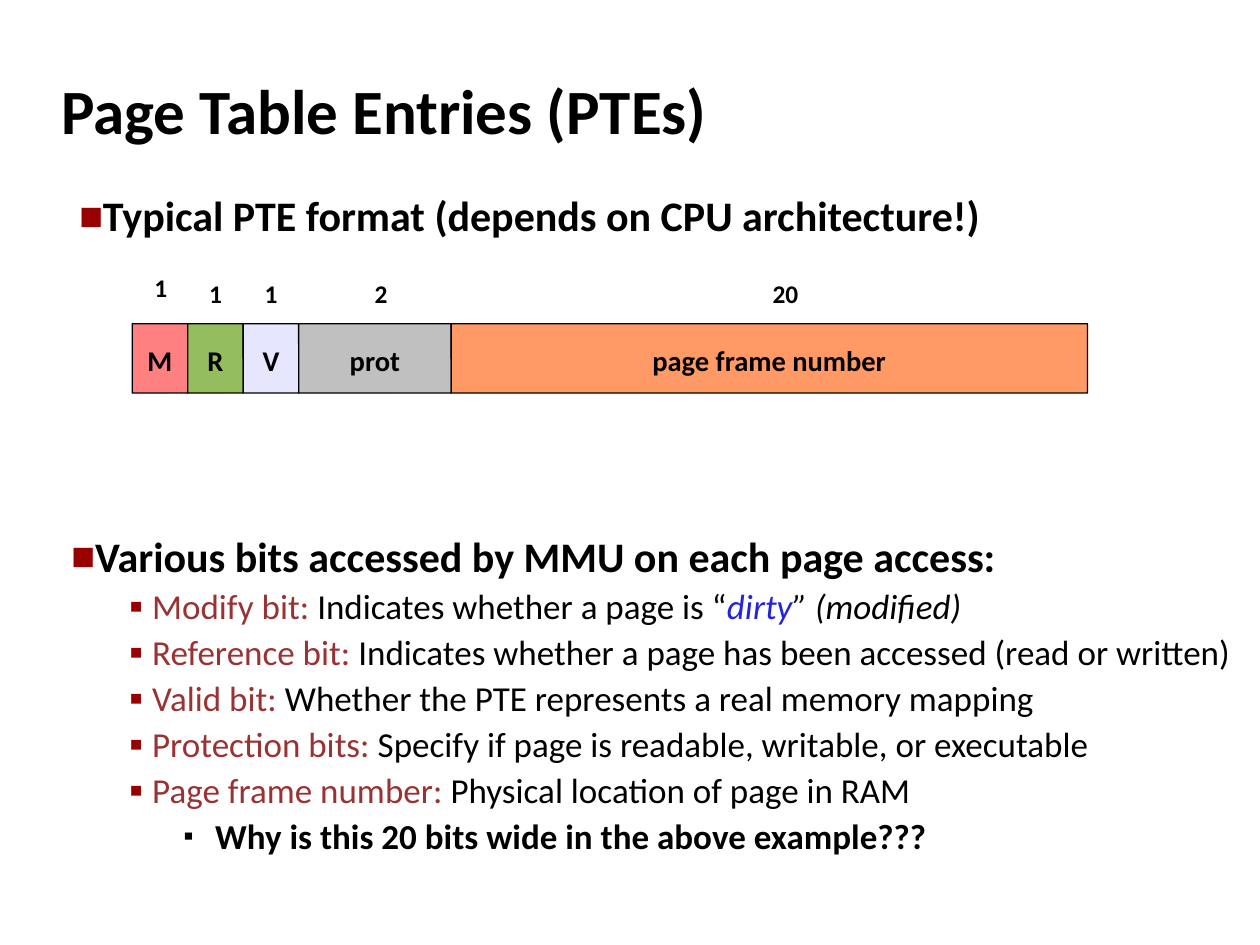
from dataclasses import dataclass

from lxml import etree
from pptx import Presentation
from pptx import util as u
from pptx.dml.color import RGBColor
from pptx.enum import shapes, text
from pptx.oxml.ns import qn


@dataclass(frozen=True)
class Theme:
    font: str = "Calibri"
    ink: str = "000000"
    term: str = "993333"
    accent: str = "2323DC"
    bullet: str = "990000"
    modify: str = "FF8080"
    reference: str = "94BD5E"
    valid: str = "E6E6FF"
    protection: str = "C0C0C0"
    frame: str = "FF9966"
    title: float = 36
    heading: float = 24
    detail: float = 20
    field: float = 16.3
    width: float = 14.5


THEME = Theme()


@dataclass(frozen=True)
class Level:
    margin: float
    indent: float
    size: float
    mark: str = ""
    scale: int = 100
    color: str = THEME.bullet
    bold: bool = False


TITLE = Level(9.4, -9.4, THEME.title, bold=True)
HEADING = Level(20.2, -13, THEME.heading, "■", 60, bold=True)
DETAIL = Level(53.3, -13, THEME.detail, "▪", 110)
QUESTION = Level(89.3, -18, THEME.detail, "▪", 80, THEME.ink, True)


@dataclass
class Deck:
    theme: Theme
    slide: object

    def style(self, run, size, color, bold, italic=False):
        font = run.font
        font.name, font.size = self.theme.font, u.Pt(size)
        font.bold, font.italic = bold, italic
        font.color.rgb = RGBColor.from_string(color)

    def bullet(self, paragraph, level):
        props = paragraph._p.get_or_add_pPr()
        props.set("marL", str(u.Pt(level.margin)))
        props.set("indent", str(u.Pt(level.indent)))
        if not level.mark:
            return
        color = etree.SubElement(props, qn("a:buClr"))
        etree.SubElement(color, qn("a:srgbClr"), val=level.color)
        etree.SubElement(props, qn("a:buSzPct"), val=str(level.scale * 1000))
        etree.SubElement(props, qn("a:buFont"), typeface=self.theme.font)
        etree.SubElement(props, qn("a:buChar"), char=level.mark)

    def outline(self, left, top, width, height, lines, anchor=text.MSO_ANCHOR.TOP):
        box = self.slide.shapes.add_textbox(*map(u.Pt, (left, top, width, height)))
        frame = box.text_frame
        frame.word_wrap = True
        frame.vertical_anchor = anchor
        for i, (level, parts) in enumerate(lines):
            paragraph = frame.add_paragraph() if i else frame.paragraphs[0]
            self.bullet(paragraph, level)
            paragraph.line_spacing = 0.94
            if i:
                paragraph.space_before = u.Pt(3.7)
            for words, color, italic in parts:
                run = paragraph.add_run()
                run.text = words
                self.style(run, level.size, color, level.bold, italic)

    def cell(self, left, top, width, height, words, size, fill=None, spacing=1.12):
        block = self.slide.shapes.add_shape(
            shapes.MSO_SHAPE.ROUNDED_RECTANGLE, *map(u.Pt, (left, top, width, height)))
        block.adjustments[0] = 0.003
        block.shadow.inherit = False
        frame = block.text_frame
        if fill:
            block.fill.solid()
            block.fill.fore_color.rgb = RGBColor.from_string(fill)
            block.line.color.rgb = RGBColor.from_string(self.theme.ink)
            block.line.width = u.Pt(0.75)
            frame.vertical_anchor = text.MSO_ANCHOR.MIDDLE
        else:
            block.fill.background()
            block.line.fill.background()
            frame.vertical_anchor = text.MSO_ANCHOR.TOP
        frame.margin_left = frame.margin_right = u.Pt(6.5)
        frame.margin_top = frame.margin_bottom = u.Pt(3.6)
        paragraph = frame.paragraphs[0]
        paragraph.text = words
        paragraph.alignment = text.PP_ALIGN.CENTER
        paragraph.line_spacing = spacing
        self.style(paragraph.runs[0], size, self.theme.ink, True)


def main():
    prs = Presentation()
    prs.slide_width, prs.slide_height = u.Pt(720), u.Pt(540)
    deck = Deck(THEME, prs.slides.add_slide(prs.slide_layouts[6]))

    def plain(words):
        return [(words, THEME.ink, False)]

    def definition(term, meaning):
        return DETAIL, [(term, THEME.term, False), (meaning, THEME.ink, False)]

    deck.outline(28, 34.6, 597.6, 59.8,
                 [(TITLE, plain("Page Table Entries (PTEs)"))], text.MSO_ANCHOR.MIDDLE)
    deck.outline(31, 107.3, 622, 391.7,
                 [(HEADING, plain("Typical PTE format (depends on CPU architecture!)"))])

    fields = [
        ("M", "1", 31.7, THEME.modify, 31, 0.5, 0.94),
        ("R", "1", 31.7, THEME.reference, 31, 0, 1.12),
        ("V", "1", 31.7, THEME.valid, 31, 0, 1.12),
        ("prot", "2", 87.1, THEME.protection, 31, 3.6, 1.12),
        ("page frame number", "20", 363.6, THEME.frame, 42.5, 9.2, 1.12),
    ]
    left = 75.6
    for name, bits, width, fill, label_width, shift, spacing in fields:
        deck.cell(left, 185, width, 39.6, name, THEME.field, fill)
        label_left = left + (width - label_width) / 2 + shift
        deck.cell(label_left, 153.4, label_width, 35.3, bits, THEME.width, spacing=spacing)
        left += width

    modify = [
        ("Modify bit:", THEME.term, False),
        (" Indicates whether a page is “", THEME.ink, False),
        ("dirty", THEME.accent, True),
        ("” (modified)", THEME.ink, True),
    ]
    deck.outline(26.6, 301.7, 693.4, 418.3, [
        (HEADING, plain("Various bits accessed by MMU on each page access:")),
        (DETAIL, modify),
        definition("Reference bit:",
                   " Indicates whether a page has been accessed (read or written)"),
        definition("Valid bit:", " Whether the PTE represents a real memory mapping"),
        definition("Protection bits:",
                   " Specify if page is readable, writable, or executable"),
        definition("Page frame number:", " Physical location of page in RAM"),
        (QUESTION, plain("Why is this 20 bits wide in the above example???")),
    ])
    prs.save("out.pptx")


if __name__ == "__main__":
    main()
